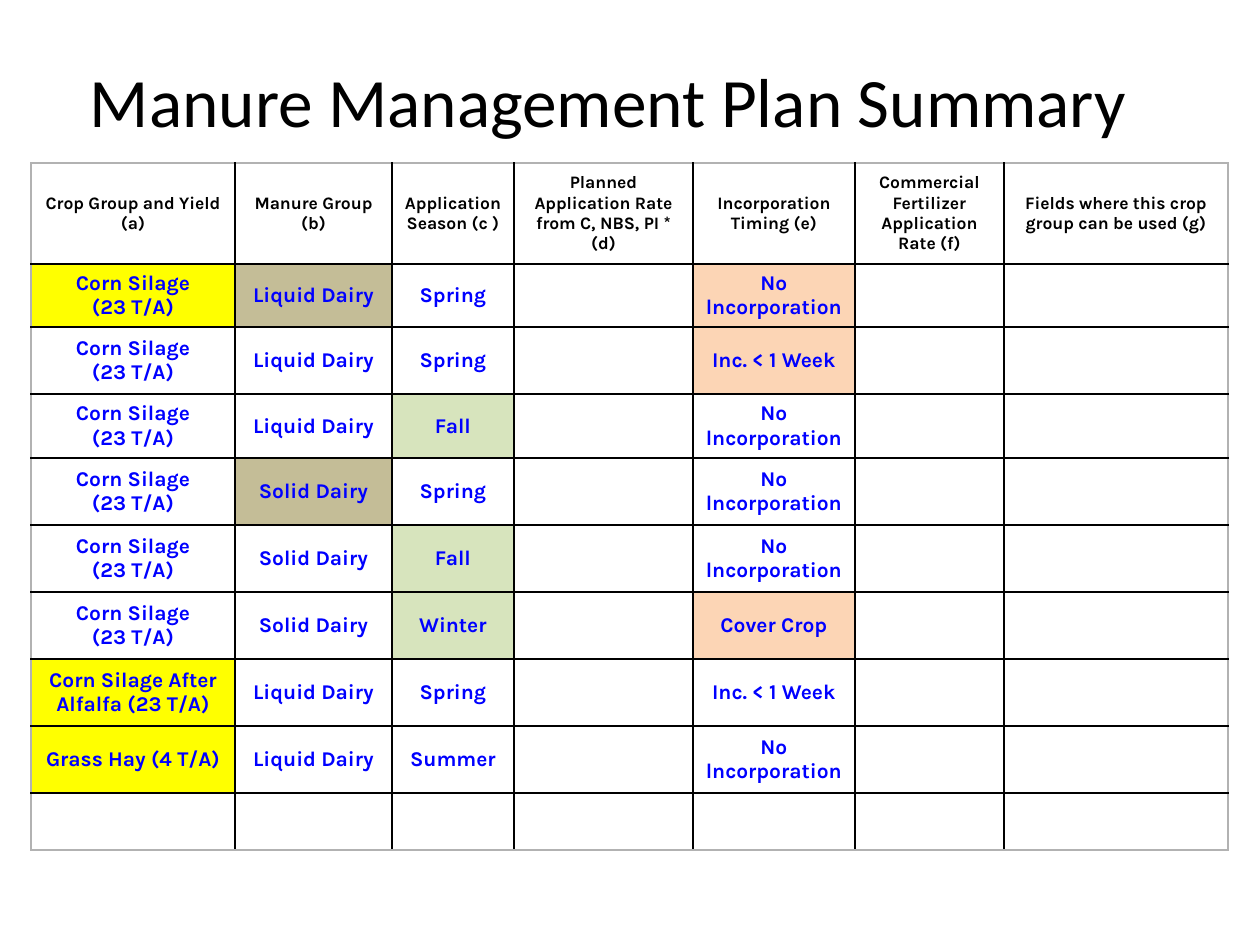
from lxml import etree
from pptx import Presentation
from pptx import util as u
from pptx.dml.color import RGBColor
from pptx.enum import text
from pptx.oxml.ns import qn

PX = 914400 // 126


def rgb(value):
    return RGBColor.from_string(value)


def add_border(cell, side, color):
    ln = etree.SubElement(cell._tc.get_or_add_tcPr(), qn("a:ln" + side), w=str(u.Pt(1)))
    fill = etree.SubElement(ln, qn("a:solidFill"))
    etree.SubElement(fill, qn("a:srgbClr"), val=color)


prs = Presentation()
prs.slide_width, prs.slide_height = 1260 * PX, 945 * PX
s = prs.slides.add_slide(prs.slide_layouts[6])

# Title
tf = s.shapes.add_textbox(90 * PX, 49 * PX, 1122 * PX, 101 * PX).text_frame
frame_format = {"word_wrap": True, "margin_left": 0, "margin_right": 0,
                "vertical_anchor": text.MSO_ANCHOR.MIDDLE}
for name, value in frame_format.items():
    setattr(tf, name, value)
r = tf.paragraphs[0].add_run()
r.text = "Manure Management Plan Summary"
r.font.name, r.font.size = "Calibri", u.Pt(39.6)
r.font.color.rgb = rgb("000000")

# Plan table
col_widths = [204, 157, 122, 179, 162, 149, 224]
row_heights = [101, 61, 67, 64, 67, 67, 67, 67, 67, 57]
corn = "Corn Silage\n(23 T/A)"
no_inc = "No lncorporation"
rows = [
    ["Crop Group and Yield (a)", "Manure Group (b)", "Application Season (c )",
     "Planned Application Rate from C, NBS, PI * (d)", "Incorporation Timing (e)",
     "Commercial Fertilizer Application Rate (f)",
     "Fields where this crop group can be used (g)"],
    [corn, "Liquid Dairy", "Spring", "", no_inc, "", ""],
    [corn, "Liquid Dairy", "Spring", "", "Inc. < 1 Week", "", ""],
    [corn, "Liquid Dairy", "Fall", "", no_inc, "", ""],
    [corn, "Solid Dairy", "Spring", "", no_inc, "", ""],
    [corn, "Solid Dairy", "Fall", "", no_inc, "", ""],
    [corn, "Solid Dairy", "Winter", "", "Cover Crop", "", ""],
    ["Corn Silage After Alfalfa (23 T/A)", "Liquid Dairy", "Spring", "", "Inc. < 1 Week", "", ""],
    ["Grass Hay (4 T/A)", "Liquid Dairy", "Summer", "", no_inc, "", ""],
    [""] * 7,
]
# Column: highlight colour and the rows that carry it
highlights = {0: ("FFFF00", {1, 7, 8}), 1: ("C4BD97", {1, 4}),
              2: ("D7E4BD", {3, 5, 6}), 4: ("FCD5B5", {1, 2, 6})}

table = s.shapes.add_table(len(rows), len(col_widths), 31 * PX, 163 * PX,
                           sum(col_widths) * PX, sum(row_heights) * PX).table
table.first_row = table.horz_banding = False
for col, width in zip(table.columns, col_widths):
    col.width = width * PX
for row, height in zip(table.rows, row_heights):
    row.height = height * PX

last_row, last_col = len(rows) - 1, len(col_widths) - 1
for i, values in enumerate(rows):
    size, color = (10, "000000") if i == 0 else (12, "0000FF")
    for j, value in enumerate(values):
        cell = table.cell(i, j)
        outer = {"L": j == 0, "R": j == last_col, "T": i == 0, "B": i == last_row}
        for side, is_outer in outer.items():
            add_border(cell, side, "B2B2B2" if is_outer else "000000")
        accent, accent_rows = highlights.get(j, ("FFFFFF", set()))
        cell.fill.solid()
        cell.fill.fore_color.rgb = rgb(accent if i in accent_rows else "FFFFFF")
        cell.vertical_anchor = text.MSO_ANCHOR.MIDDLE
        cell.text = value
        for p in cell.text_frame.paragraphs:
            p.alignment = text.PP_ALIGN.CENTER
            for r in p.runs:
                r.font.name, r.font.size, r.font.bold = "Karla", u.Pt(size), True
                r.font.color.rgb = rgb(color)

prs.save("out.pptx")
